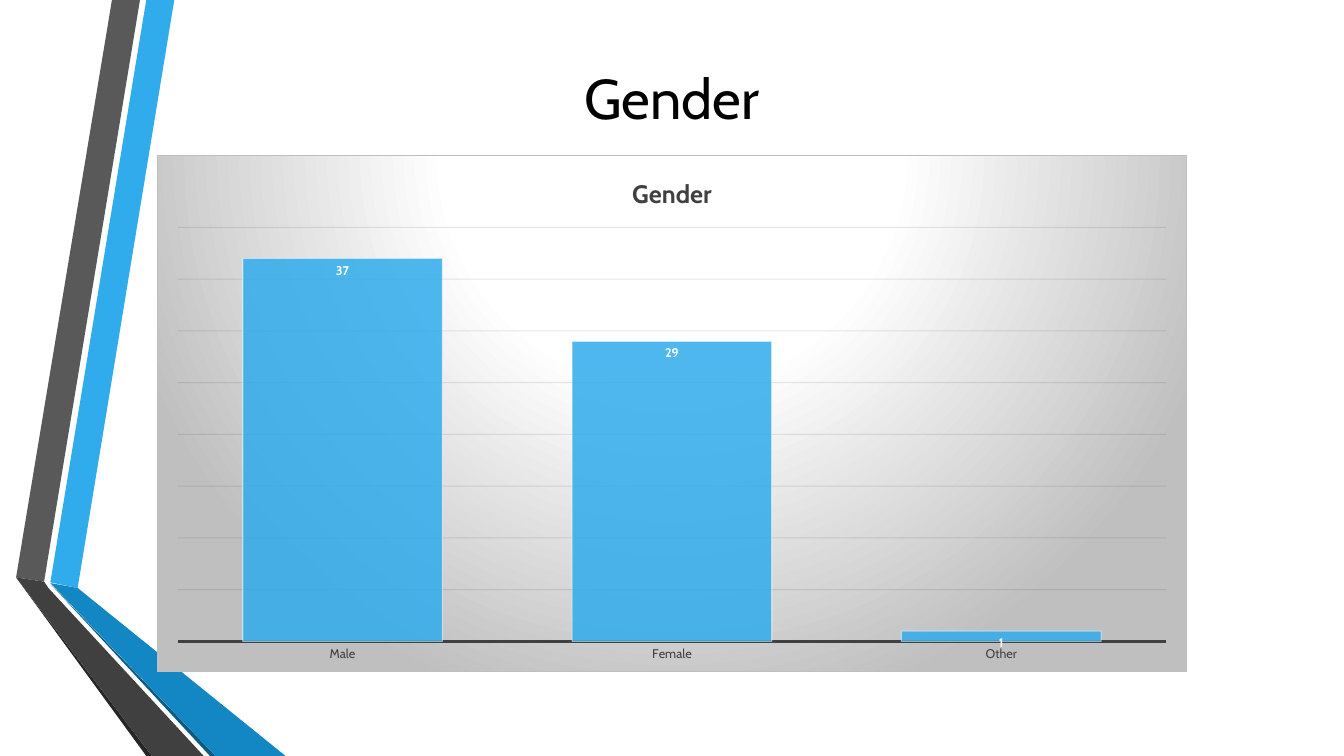
import pptx
import pptx.chart.data
import pptx.dml.color
import pptx.enum.chart
import pptx.enum.text
import pptx.oxml
import pptx.oxml.ns
import pptx.util
from pptx.util import Pt

DRAWING_NS = "http://schemas.openxmlformats.org/drawingml/2006/main"
CHART_NS = "http://schemas.openxmlformats.org/drawingml/2006/chart"

# Fill colour and outline of each ribbon facet, in points
RIBBON_FACETS = [
    ("30ACEC", [(36, 416), (55.5, 420), (124.5, 0), (104.5, 0)]),
    ("595959", [(100, 0), (80, 0), (11.5, 412.5), (31.5, 415.5)]),
    ("262626", [(11.5, 412.5), (104.5, 540), (108.5, 540)]),
    ("0C5A82", [(36, 417), (150, 540), (154, 540)]),
    ("1287C3", [(36, 416.5), (154, 540), (204, 540), (55.5, 420)]),
    ("404040", [(11.5, 412.5), (108.5, 540), (145.5, 540), (34.5, 420), (31.5, 415.5)]),
]


def rgb(value):
    return pptx.dml.color.RGBColor.from_string(value)


def set_opacity(line_or_fill_element, percent):
    """Make every explicit colour below the element partly transparent."""
    for color in line_or_fill_element.iter(pptx.oxml.ns.qn("a:srgbClr")):
        alpha = color.makeelement(pptx.oxml.ns.qn("a:alpha"), {"val": str(percent * 1000)})
        color.append(alpha)


class SlideBuilder:
    font_name = "Cabin"
    dark = "404040"

    def __init__(self, presentation):
        self.slide = presentation.slides.add_slide(presentation.slide_layouts[5])

    def style_font(self, font, size, color, bold=False):
        font.name = self.font_name
        font.size = Pt(size)
        font.bold = bold
        font.color.rgb = rgb(color)

    def style_line(self, line, color, width):
        line.color.rgb = rgb(color)
        line.width = Pt(width)

    def add_title(self, text, left, top, width, height):
        title = self.slide.shapes.title
        title.left, title.top = Pt(left), Pt(top)
        title.width, title.height = Pt(width), Pt(height)
        title.text_frame.text = text
        title.text_frame.vertical_anchor = pptx.enum.text.MSO_ANCHOR.MIDDLE
        paragraph = title.text_frame.paragraphs[0]
        paragraph.alignment = pptx.enum.text.PP_ALIGN.CENTER
        self.style_font(paragraph.font, 40, "000000")

    def add_facet(self, color, points):
        corners = [(Pt(x), Pt(y)) for x, y in points]
        builder = self.slide.shapes.build_freeform(*corners[0])
        builder.add_line_segments(corners[1:], close=True)
        shape = builder.convert_to_shape()
        shape.shadow.inherit = False
        shape.fill.solid()
        shape.fill.fore_color.rgb = rgb(color)
        shape.line.fill.background()

    def add_column_chart(self, title, categories, values, left, top, width, height):
        data = pptx.chart.data.CategoryChartData()
        data.categories = categories
        data.add_series("Series 1", values)
        chart = self.slide.shapes.add_chart(
            pptx.enum.chart.XL_CHART_TYPE.COLUMN_CLUSTERED,
            Pt(left), Pt(top), Pt(width), Pt(height), data).chart
        self.style_font(chart.font, 10, "000000")
        chart.has_legend = False
        chart.has_title = True
        chart.chart_title.text_frame.text = title
        self.style_font(chart.chart_title.text_frame.paragraphs[0].font, 18, self.dark, bold=True)
        chart.chart_title.include_in_layout = False
        self.style_axes(chart)
        self.style_columns(chart.plots[0])
        self.add_chart_background(chart)

    def style_axes(self, chart):
        no_marks = pptx.enum.chart.XL_TICK_MARK.NONE
        category_axis = chart.category_axis
        category_axis.major_tick_mark = no_marks
        category_axis.minor_tick_mark = no_marks
        self.style_font(category_axis.tick_labels.font, 9, self.dark)
        self.style_line(category_axis.format.line, self.dark, 1.5)
        value_axis = chart.value_axis
        value_axis.visible = False
        value_axis.minimum_scale, value_axis.maximum_scale = 0, 40
        value_axis.major_unit = 5
        value_axis.has_major_gridlines = True
        gridlines = value_axis.major_gridlines
        self.style_line(gridlines.format.line, "0D0D0D", 0.75)
        set_opacity(value_axis._element.find(pptx.oxml.ns.qn("c:majorGridlines")), 10)

    def style_columns(self, plot):
        plot.gap_width = 65
        plot.vary_by_categories = False
        series = plot.series[0]
        series.format.fill.solid()
        series.format.fill.fore_color.rgb = rgb("30ACEC")
        properties = series._element.find(pptx.oxml.ns.qn("c:spPr"))
        set_opacity(properties, 85)
        self.style_line(series.format.line, "FFFFFF", 0.75)
        set_opacity(properties.find(pptx.oxml.ns.qn("a:ln")), 50)
        labels = series.data_labels
        labels.show_value = True
        labels.position = pptx.enum.chart.XL_LABEL_POSITION.INSIDE_END
        self.style_font(labels.font, 9, "FFFFFF", bold=True)

    def add_chart_background(self, chart):
        """Fill the chart area with a circular gradient inside a thin border."""
        stops = "".join(
            f'<a:gs pos="{position * 1000}"><a:srgbClr val="{color}"/></a:gs>'
            for position, color in [(0, "FFFFFF"), (39, "FFFFFF"), (100, "BFBFBF")])
        properties = pptx.oxml.parse_xml(
            f'<c:spPr xmlns:c="{CHART_NS}" xmlns:a="{DRAWING_NS}">'
            f'<a:gradFill><a:gsLst>{stops}</a:gsLst><a:path path="circle">'
            '<a:fillToRect l="50000" t="-80000" r="50000" b="180000"/></a:path></a:gradFill>'
            '<a:ln w="9525"><a:solidFill><a:srgbClr val="BFBFBF"/></a:solidFill></a:ln></c:spPr>')
        chart._chartSpace.find(pptx.oxml.ns.qn("c:chart")).addnext(properties)


def main():
    presentation = pptx.Presentation()
    presentation.slide_width, presentation.slide_height = Pt(960), Pt(540)
    builder = SlideBuilder(presentation)
    for color, points in RIBBON_FACETS:
        builder.add_facet(color, points)
    builder.add_title("Gender", 66, 26.5, 827.5, 85)
    builder.add_column_chart("Gender", ["Male", "Female", "Other"], [37, 29, 1],
                             112, 111, 736, 369)
    presentation.save("out.pptx")


if __name__ == "__main__":
    main()
